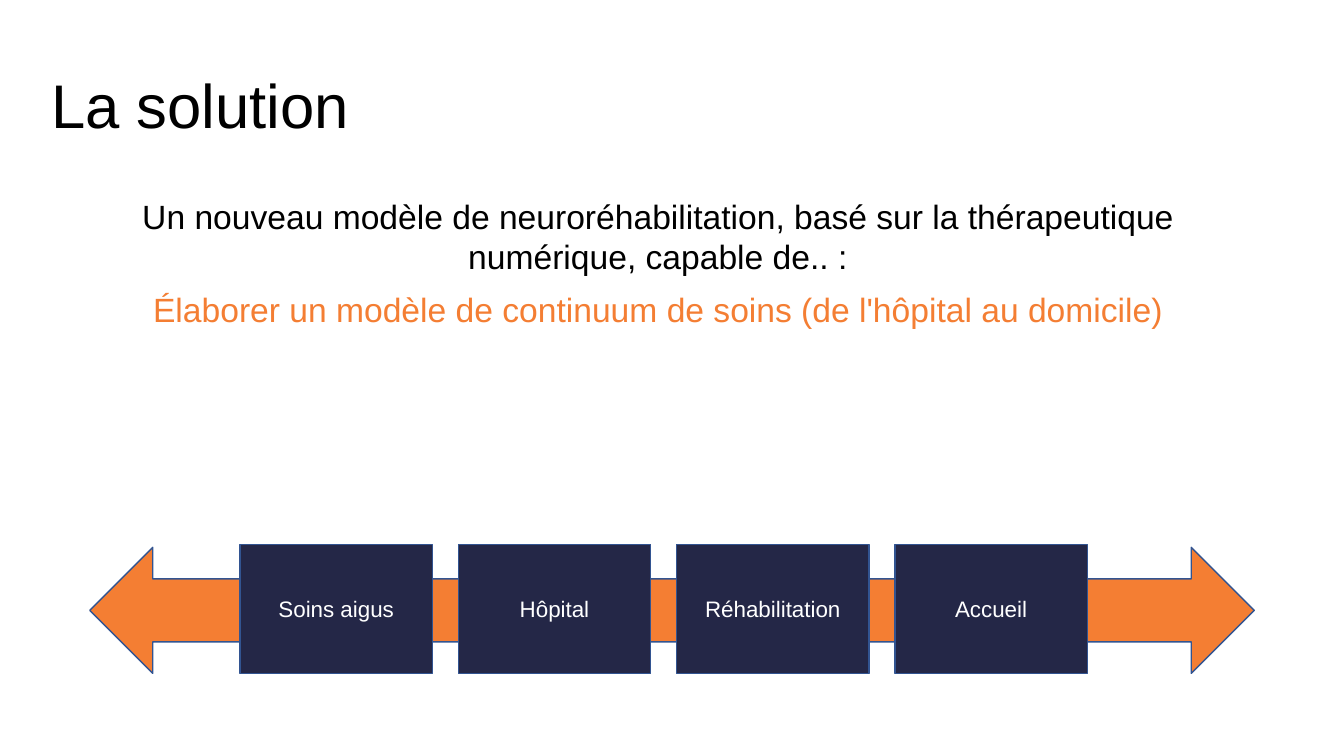
from pptx import Presentation
from pptx.dml.color import RGBColor
from pptx.enum.shapes import MSO_SHAPE
from pptx.enum.text import MSO_ANCHOR, PP_ALIGN
from pptx.util import Inches, Pt

DOUBLE_ARROW, RECTANGLE = MSO_SHAPE.LEFT_RIGHT_ARROW, MSO_SHAPE.RECTANGLE
TOP, MIDDLE = MSO_ANCHOR.TOP, MSO_ANCHOR.MIDDLE
LEFT, CENTER = PP_ALIGN.LEFT, PP_ALIGN.CENTER

BLACK = RGBColor(0x00, 0x00, 0x00)
WHITE = RGBColor(0xFF, 0xFF, 0xFF)
ORANGE = RGBColor(0xF4, 0x7E, 0x33)
NAVY = RGBColor(0x24, 0x27, 0x47)
OUTLINE = RGBColor(0x32, 0x54, 0x91)

STAGES = ["Soins aigus", "Hôpital", "Réhabilitation", "Accueil"]


def write(paragraph, text, size=24, color=BLACK, align=LEFT, before=0, spacing=1.0):
    """Fill one paragraph with formatted text."""
    paragraph.alignment = align
    paragraph.space_before = Pt(before)
    paragraph.line_spacing = spacing
    run = paragraph.add_run()
    run.text = text
    run.font.name = "Arial"
    run.font.size = Pt(size)
    run.font.color.rgb = color


def add_frame(slide, left, top, width, height, anchor=TOP):
    box = slide.shapes.add_textbox(Inches(left), Inches(top), Inches(width), Inches(height))
    frame = box.text_frame
    frame.word_wrap = True
    frame.vertical_anchor = anchor
    return frame


def add_block(slide, kind, left, top, width, height, fill):
    block = slide.shapes.add_shape(
        kind, Inches(left), Inches(top), Inches(width), Inches(height))
    block.shadow.inherit = False
    block.fill.solid()
    block.fill.fore_color.rgb = fill
    block.line.color.rgb = OUTLINE
    block.line.width = Pt(1)
    return block


def add_title(slide, left, top, width, height):
    frame = add_frame(slide, left, top, width, height, MIDDLE)
    write(frame.paragraphs[0], "La solution", size=44, spacing=0.9)


def add_statement(slide, left, top, width, height):
    frame = add_frame(slide, left, top, width, height)
    write(frame.paragraphs[0],
          "Un nouveau modèle de neuroréhabilitation, basé sur la thérapeutique "
          "numérique, capable de.. :", align=CENTER)
    write(frame.add_paragraph(),
          "Élaborer un modèle de continuum de soins (de l'hôpital au domicile)",
          color=ORANGE, align=CENTER, before=9)


def add_continuum(slide, left, top, width, height):
    # Arrow behind the care stages
    add_block(slide, DOUBLE_ARROW, left, top + 0.03, width, height - 0.03, ORANGE)

    # Evenly spaced care stages
    first_left, stage_width, pitch = left + 1.49, 1.91, 2.165
    for index, stage in enumerate(STAGES):
        block = add_block(slide, RECTANGLE, first_left + index * pitch, top,
                          stage_width, height, NAVY)
        frame = block.text_frame
        frame.word_wrap = True
        frame.vertical_anchor = MIDDLE
        write(frame.paragraphs[0], stage, size=16, color=WHITE, align=CENTER)


def main():
    deck = Presentation()
    deck.slide_width, deck.slide_height = Inches(13.33), Inches(7.5)
    slide = deck.slides.add_slide(deck.slide_layouts[6])
    add_title(slide, 0.41, 0.35, 12.46, 1.45)
    add_statement(slide, 0.62, 1.89, 11.81, 1.18)
    add_continuum(slide, 0.89, 5.4, 11.55, 1.28)
    deck.save("out.pptx")


if __name__ == "__main__":
    main()
